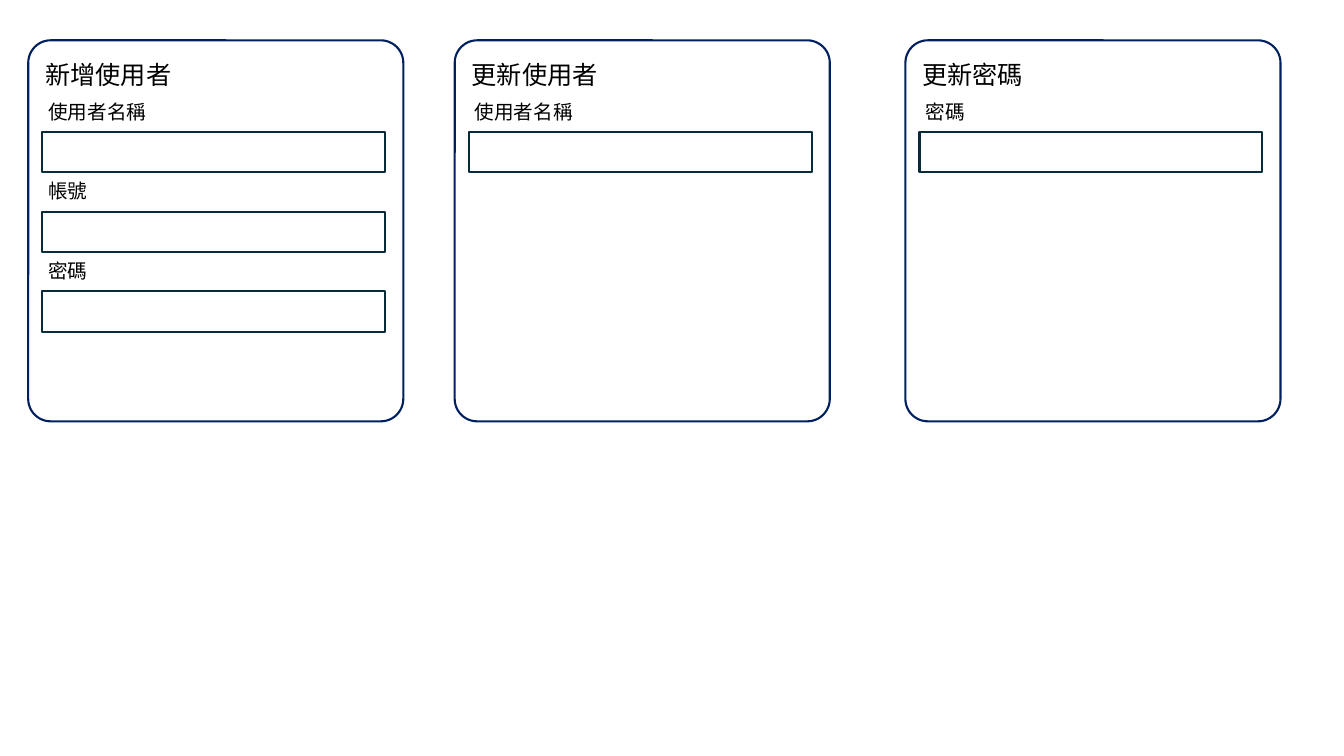
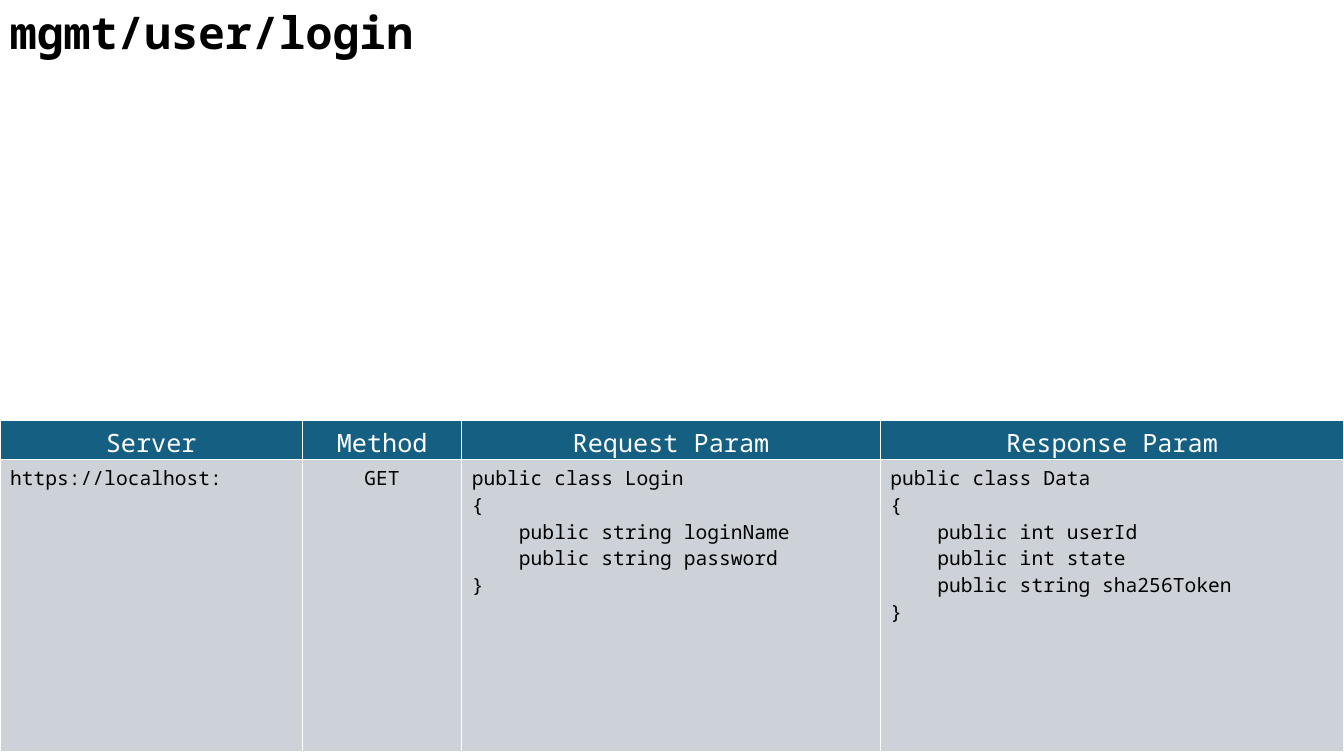
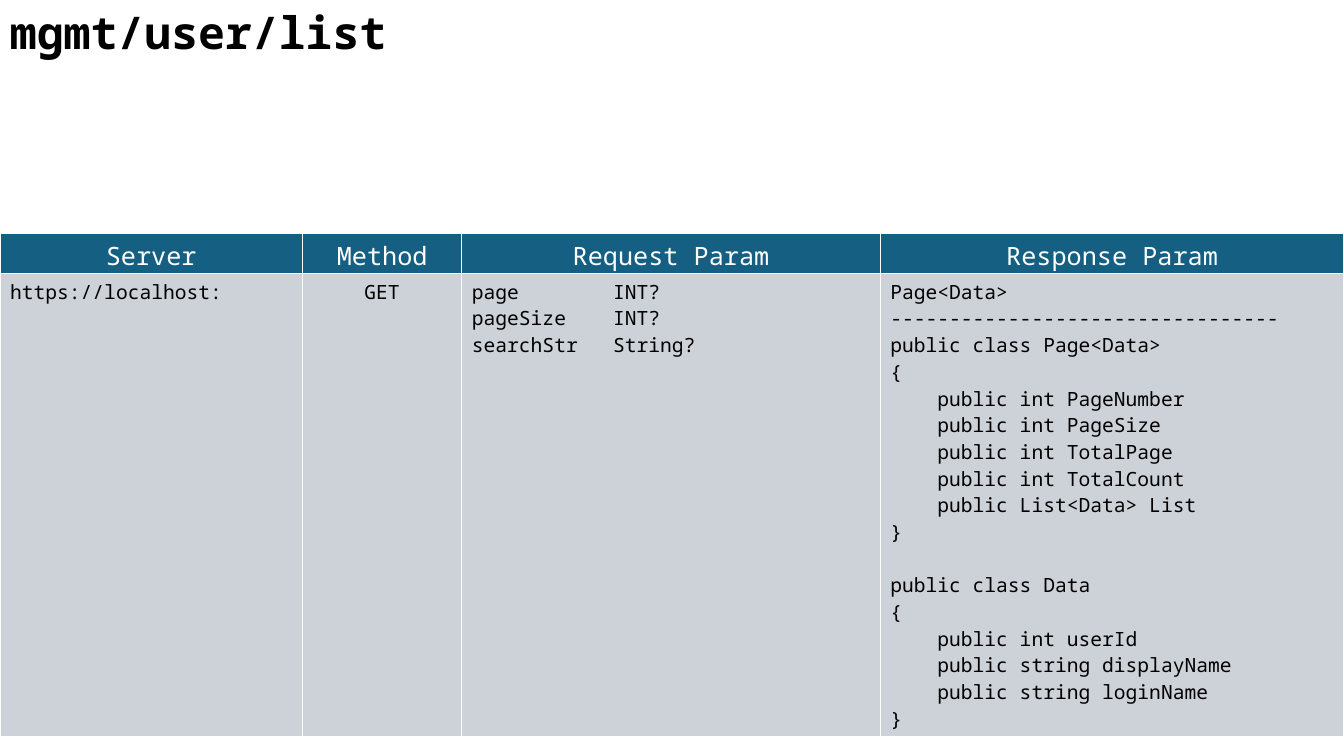
"""Build the user management mock-up and its API reference slides."""
from dataclasses import dataclass

from lxml.etree import SubElement
from pptx import Presentation
from pptx.dml.color import RGBColor
from pptx.enum.shapes import MSO_SHAPE
from pptx.enum.text import MSO_AUTO_SIZE, PP_ALIGN
from pptx.oxml.ns import qn
from pptx.util import Inches, Pt


@dataclass(frozen=True)
class Theme:
    ink: str = "000000"
    paper: str = "FFFFFF"
    card_line: str = "002060"
    field_line: str = "092A39"
    header: str = "156082"
    body: str = "CCD2D8"
    form_font: str = "Noto Sans CJK SC"
    code_font: str = "Noto Sans Mono"
    title_size: int = 32
    heading_size: int = 18
    text_size: int = 14
    outline: float = 1.5
    cell_line: int = 1
    block_gap: int = 19


THEME = Theme()
WIDTH, HEIGHT = 13.33, 7.5

CARDS = [
    (0.28, "新增使用者", ["使用者名稱", "帳號", "密碼"]),
    (4.51, "更新使用者", ["使用者名稱"]),
    (8.98, "更新密碼", ["密碼"]),
]
CARD_TOP, CARD_WIDTH, CARD_HEIGHT = 0.4, 3.72, 3.78
FIELD_WIDTH, FIELD_HEIGHT, FIELD_PITCH = 3.4, 0.4, 0.79

HEADERS = ["Server", "Method", "Request Param", "Response Param"]
COLUMNS = [3, 1.58, 4.15, 4.6]
HEADER_HEIGHT = 0.39
METHOD_COLUMN = HEADERS.index("Method")
TAB_STOP = 1.4

ENDPOINTS = [
    {
        "title": "mgmt/user/login",
        "top": 4.17,
        "body_height": 2.9,
        "cells": [
            ["https://localhost:"],
            ["GET"],
            ["""public class Login
{
    public string loginName
    public string password
}"""],
            ["""public class Data
{
    public int userId
    public int state
    public string sha256Token
}"""],
        ],
    },
    {
        "title": "mgmt/user/list",
        "top": 2.32,
        "body_height": 4.6,
        "cells": [
            ["https://localhost:"],
            ["GET"],
            ["page\tINT?\npageSize\tINT?\nsearchStr\tString?"],
            ["""Page<Data>
---------------------------------
public class Page<Data>
{
    public int PageNumber
    public int PageSize
    public int TotalPage
    public int TotalCount
    public List<Data> List
}""", """public class Data
{
    public int userId
    public string displayName
    public string loginName
}"""],
        ],
    },
]


def add_span(para, text, size, font, color=THEME.ink, bold=False):
    span = para.add_run()
    span.text = text
    span.font.size = Pt(size)
    span.font.bold = bold
    span.font.color.rgb = RGBColor.from_string(color)
    span.font.name = font
    SubElement(span.font._element, qn("a:ea"), typeface=font)


def add_text(page, left, top, width, height, text, size, font, wrap=False, bold=False):
    box = page.shapes.add_textbox(*map(Inches, (left, top, width, height)))
    box.text_frame.word_wrap = wrap
    box.text_frame.auto_size = MSO_AUTO_SIZE.SHAPE_TO_FIT_TEXT
    add_span(box.text_frame.paragraphs[0], text, size, font, bold=bold)


def add_label(page, left, top, height, text, size):
    width = len(text) * size / 72 + 0.2
    add_text(page, left, top, width, height, text, size, THEME.form_font)


def add_panel(page, kind, left, top, width, height, line):
    panel = page.shapes.add_shape(kind, *map(Inches, (left, top, width, height)))
    panel.shadow.inherit = False
    panel.fill.solid()
    panel.fill.fore_color.rgb = RGBColor.from_string(THEME.paper)
    panel.line.color.rgb = RGBColor.from_string(line)
    panel.line.width = Pt(THEME.outline)
    return panel


def add_card(page, left, title, fields):
    card = add_panel(page, MSO_SHAPE.ROUNDED_RECTANGLE, left, CARD_TOP,
                     CARD_WIDTH, CARD_HEIGHT, THEME.card_line)
    card.adjustments[0] = 0.06
    add_label(page, left + 0.07, CARD_TOP + 0.14, 0.4, title, THEME.heading_size)
    for index, field in enumerate(fields):
        top = CARD_TOP + 0.54 + index * FIELD_PITCH
        add_label(page, left + 0.1, top, 0.34, field, THEME.text_size)
        add_panel(page, MSO_SHAPE.RECTANGLE, left + 0.14, top + 0.37,
                  FIELD_WIDTH, FIELD_HEIGHT, THEME.field_line)


def style_cell(cell, fill):
    properties = cell._tc.get_or_add_tcPr()
    for side in ("lnL", "lnR", "lnT", "lnB"):
        line = SubElement(properties, qn(f"a:{side}"), w=str(Pt(THEME.cell_line)))
        paint = SubElement(line, qn("a:solidFill"))
        SubElement(paint, qn("a:srgbClr"), val=THEME.paper)
    cell.fill.solid()
    cell.fill.fore_color.rgb = RGBColor.from_string(fill)


def add_tab_stop(para):
    stops = SubElement(para._p.get_or_add_pPr(), qn("a:tabLst"))
    SubElement(stops, qn("a:tab"), pos=str(Inches(TAB_STOP)), algn="l")


def fill_cell(cell, blocks, size, color, centred):
    frame = cell.text_frame
    lines = [(block_index > 0 and line_index == 0, line)
             for block_index, block in enumerate(blocks)
             for line_index, line in enumerate(block.split("\n"))]
    for index, (starts_block, line) in enumerate(lines):
        para = frame.add_paragraph() if index else frame.paragraphs[0]
        para.alignment = PP_ALIGN.CENTER if centred else PP_ALIGN.LEFT
        if starts_block:
            para.space_before = Pt(THEME.block_gap)
        if "\t" in line:
            add_tab_stop(para)
        add_span(para, line, size, THEME.code_font, color)


def add_endpoint(page, title, top, body_height, cells):
    add_text(page, 0, 0, 9.45, 0.64, title, THEME.title_size, THEME.code_font,
             wrap=True, bold=True)
    heights = [HEADER_HEIGHT, body_height]
    table = page.shapes.add_table(
        len(heights), len(COLUMNS),
        *map(Inches, (0, top, WIDTH, sum(heights)))).table
    table.horz_banding = False
    for row, height in zip(table.rows, heights):
        row.height = Inches(height)
    for index, width in enumerate(COLUMNS):
        table.columns[index].width = Inches(width)
        head, body = table.cell(0, index), table.cell(1, index)
        style_cell(head, THEME.header)
        head.margin_bottom = 0
        fill_cell(head, [HEADERS[index]], THEME.heading_size, THEME.paper, True)
        style_cell(body, THEME.body)
        fill_cell(body, cells[index], THEME.text_size, THEME.ink,
                  index == METHOD_COLUMN)


def main():
    deck = Presentation()
    deck.slide_width, deck.slide_height = Inches(WIDTH), Inches(HEIGHT)
    blank = deck.slide_layouts[6]
    page = deck.slides.add_slide(blank)
    for card in CARDS:
        add_card(page, *card)
    for endpoint in ENDPOINTS:
        add_endpoint(deck.slides.add_slide(blank), **endpoint)
    deck.save("out.pptx")


if __name__ == "__main__":
    main()
